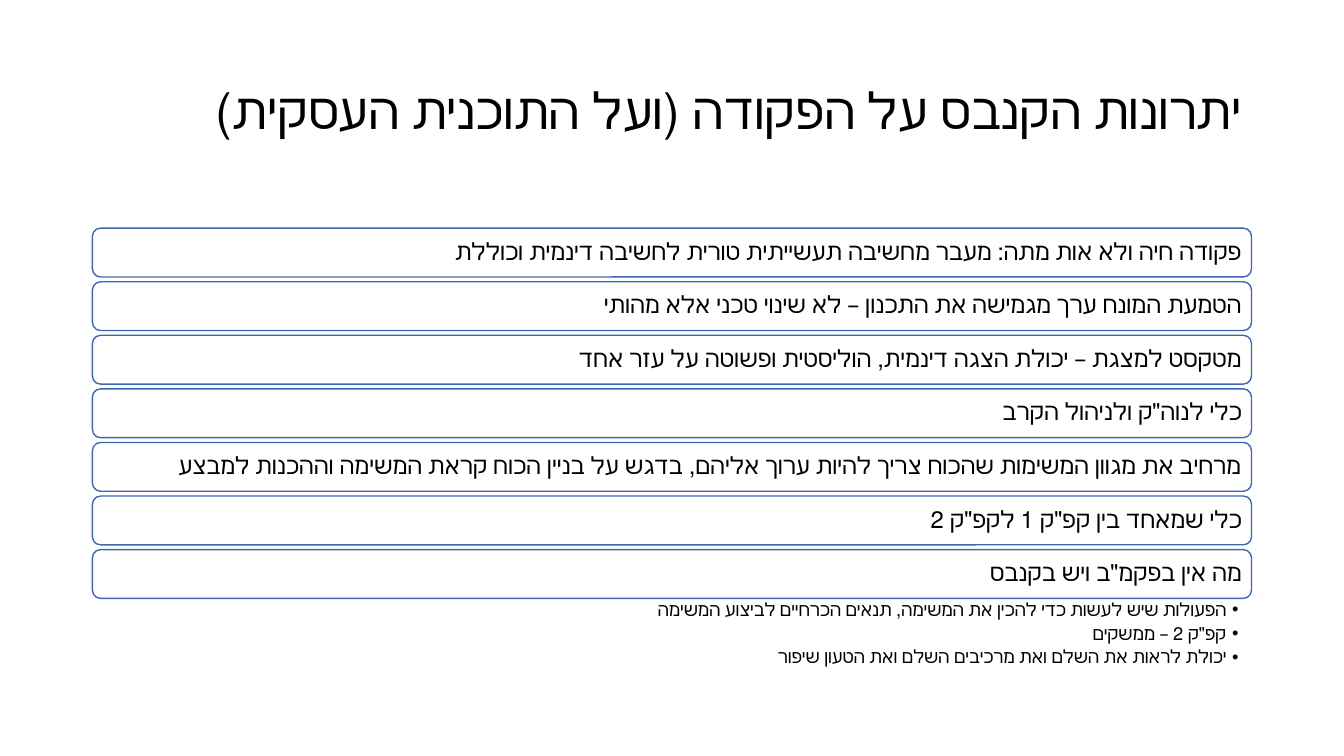
from typing import NamedTuple

from lxml import etree
from pptx import Presentation
from pptx import util as u
from pptx.dml.color import RGBColor
from pptx.enum import lang, shapes, text
from pptx.oxml import ns
from pptx.util import Cm

BLACK = RGBColor(0x00, 0x00, 0x00)
WHITE = RGBColor(0xFF, 0xFF, 0xFF)
BLUE = RGBColor(0x3E, 0x67, 0xB2)
FONT = "Roboto"

LEFT, WIDTH = Cm(2.33), Cm(29.21)
BAR_TOP, BAR_HEIGHT, BAR_PITCH = Cm(5.75), Cm(1.23), Cm(1.35)
BULLET_INDENT = Cm(0.31)

TITLE = "יתרונות הקנבס על הפקודה (ועל התוכנית העסקית)"
ADVANTAGES = [
    "פקודה חיה ולא אות מתה: מעבר מחשיבה תעשייתית טורית לחשיבה דינמית וכוללת",
    "הטמעת המונח ערך מגמישה את התכנון – לא שינוי טכני אלא מהותי",
    "מטקסט למצגת – יכולת הצגה דינמית, הוליסטית ופשוטה על עזר אחד",
    'כלי לנוה"ק ולניהול הקרב',
    "מרחיב את מגוון המשימות שהכוח צריך להיות ערוך אליהם, בדגש על בניין הכוח קראת המשימה וההכנות למבצע",
    'כלי שמאחד בין קפ"ק 1 לקפ"ק 2',
    'מה אין בפקמ"ב ויש בקנבס',
]
CANVAS_EXTRAS = [
    "הפעולות שיש לעשות כדי להכין את המשימה, תנאים הכרחיים לביצוע המשימה",
    'קפ"ק 2 – ממשקים',
    "יכולת לראות את השלם ואת מרכיבים השלם ואת הטעון שיפור",
]


class Insets(NamedTuple):
    left: float
    top: float
    right: float
    bottom: float


class Style(NamedTuple):
    size: float
    insets: Insets
    anchor: text.MSO_ANCHOR
    space_after: float = 0
    bulleted: bool = False


TITLE_STYLE = Style(36, Insets(0.25, 0.13, 0.25, 0.13), text.MSO_ANCHOR.MIDDLE)
BAR_STYLE = Style(17, Insets(0.18, 0.18, 0.18, 0.18), text.MSO_ANCHOR.MIDDLE)
EXTRAS_STYLE = Style(13, Insets(0.93, 0.05, 0.33, 0.05), text.MSO_ANCHOR.TOP, 3, True)


def add_bullet(para) -> None:
    props = para._p.get_or_add_pPr()
    props.set("marL", str(BULLET_INDENT))
    props.set("indent", str(-BULLET_INDENT))
    etree.SubElement(props, ns.qn("a:buFont")).set("typeface", "Arial")
    etree.SubElement(props, ns.qn("a:buChar")).set("char", "•")


def write_hebrew(shape, lines: list[str], style: Style) -> None:
    """Fill a shape with right-to-left paragraphs, one for each line."""
    frame = shape.text_frame
    frame.word_wrap = True
    frame.vertical_anchor = style.anchor
    frame.margin_left, frame.margin_top, frame.margin_right, frame.margin_bottom = map(Cm, style.insets)
    for index, line in enumerate(lines):
        para = frame.add_paragraph() if index else frame.paragraphs[0]
        if style.bulleted:
            add_bullet(para)
        para._p.get_or_add_pPr().set("rtl", "1")
        para.alignment = text.PP_ALIGN.RIGHT
        para.line_spacing = 0.9
        para.space_after = u.Pt(style.space_after)
        span = para.add_run()
        span.text = line
        span.font.size = u.Pt(style.size)
        span.font.name = FONT
        span.font.color.rgb = BLACK
        span.font.language_id = lang.MSO_LANGUAGE_ID.HEBREW


def add_bar(page, top: int, line: str) -> None:
    bar = page.shapes.add_shape(shapes.MSO_SHAPE.ROUNDED_RECTANGLE, LEFT, top, WIDTH, BAR_HEIGHT)
    bar.shadow.inherit = False
    bar.fill.solid()
    bar.fill.fore_color.rgb = WHITE
    bar.line.color.rgb = BLUE
    bar.line.width = u.Pt(1)
    write_hebrew(bar, [line], BAR_STYLE)


def main() -> None:
    deck = Presentation()
    deck.slide_width, deck.slide_height = Cm(33.87), Cm(19.05)
    page = deck.slides.add_slide(deck.slide_layouts[6])

    title = page.shapes.add_textbox(LEFT, Cm(1.01), WIDTH, Cm(3.68))
    write_hebrew(title, [TITLE], TITLE_STYLE)

    for index, line in enumerate(ADVANTAGES):
        add_bar(page, BAR_TOP + index * BAR_PITCH, line)

    extras_top = BAR_TOP + (len(ADVANTAGES) - 1) * BAR_PITCH + BAR_HEIGHT
    extras = page.shapes.add_textbox(LEFT, extras_top, WIDTH, Cm(2.06))
    write_hebrew(extras, CANVAS_EXTRAS, EXTRAS_STYLE)

    deck.save("out.pptx")


if __name__ == "__main__":
    main()
